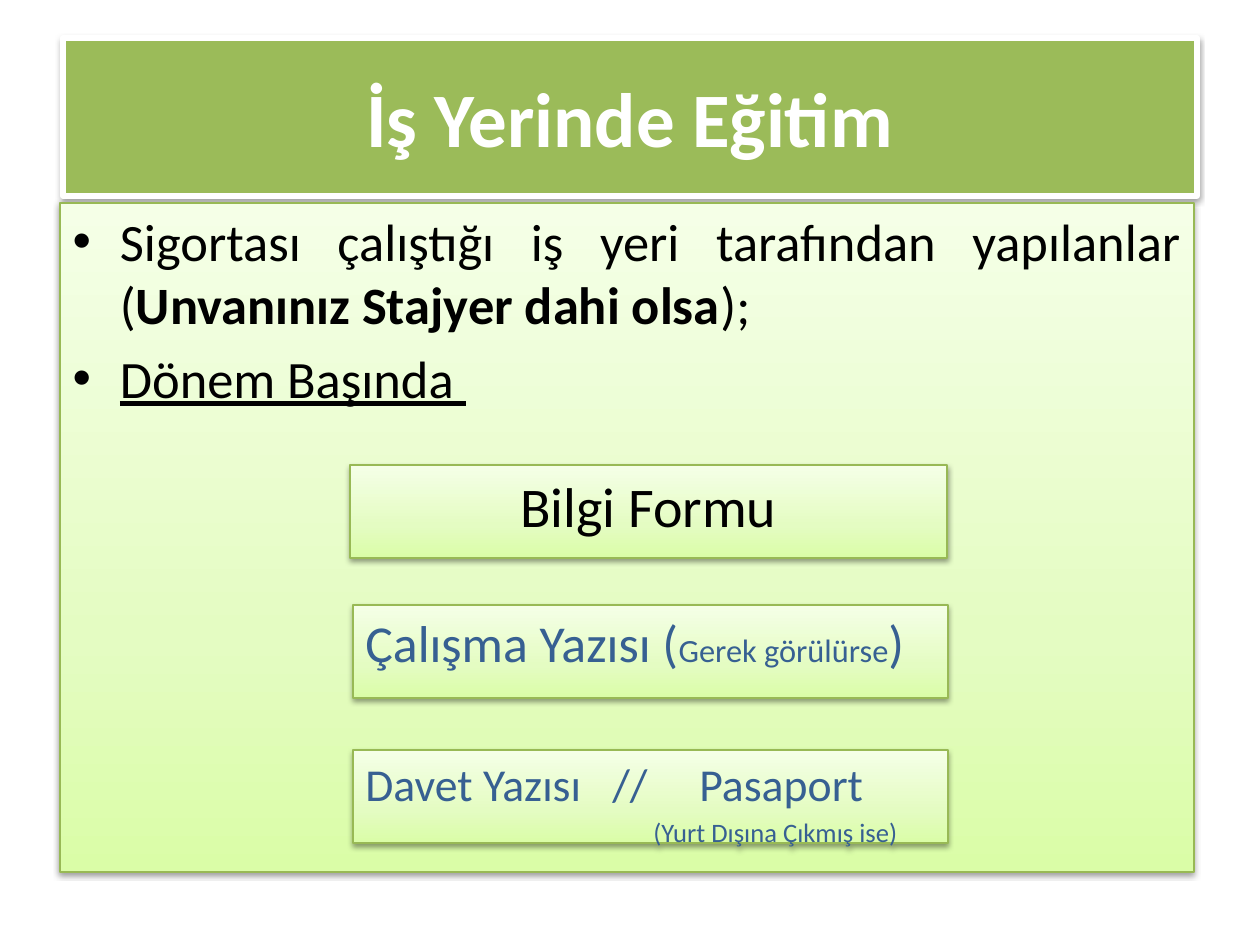
"""Builds the slide about workplace training and the forms due at the start of term."""
from lxml.etree import SubElement
from pptx import Presentation
from pptx.dml.color import RGBColor
from pptx.enum.shapes import MSO_SHAPE
from pptx.enum.text import MSO_ANCHOR, MSO_AUTO_SIZE, PP_ALIGN
from pptx.oxml.ns import qn
from pptx.util import Pt

PX = 914400 / 126
COLORS = {"green": "9BBB59", "edge": "98B955", "white": "FFFFFF",
          "black": "000000", "blue": "376092"}
GRADIENT = [(0, "DAFDA7"), (35, "E4FCC2"), (100, "F5FFE7")]

TITLE = [{"align": PP_ALIGN.CENTER, "spans": [
    ("İş Yerinde Eğitim", 44, "white", {"bold": True})]}]
BODY = [
    {"align": PP_ALIGN.JUSTIFY, "spans": [
        ("Sigortası çalıştığı iş yeri tarafından yapılanlar (", 30, "black", {}),
        ("Unvanınız Stajyer dahi olsa", 30, "black", {"bold": True}),
        (");", 30, "black", {})]},
    {"align": PP_ALIGN.JUSTIFY, "spans": [
        ("Dönem Başında ", 30, "black", {"underline": True})]},
]
FORMS = [
    ((350, 465, 597, 93), [{"align": PP_ALIGN.CENTER, "spans": [
        ("Bilgi Formu", 32, "black", {})]}]),
    ((353, 605, 595, 93), [{"align": PP_ALIGN.LEFT, "spans": [
        ("Çalışma Yazısı (", 29.6, "blue", {}),
        ("Gerek görülürse", 18.5, "blue", {}),
        (")", 29.6, "blue", {})]}]),
    ((353, 750, 595, 93), [
        {"align": PP_ALIGN.LEFT, "tabs": (247, 334), "spans": [
            ("Davet Yazısı\t//\tPasaport", 26.1, "blue", {})]},
        {"align": PP_ALIGN.LEFT, "indent": 288, "spans": [
            ("(Yurt Dışına Çıkmış ise)", 15.2, "blue", {})]}]),
]


def px(length):
    return round(length * PX)


def place(shape, area):
    for name, length in zip(("left", "top", "width", "height"), area):
        setattr(shape, name, px(length))


def add_color(parent, color):
    return SubElement(parent, qn("a:srgbClr"), val=color)


def add_gradient(shape):
    gradient = SubElement(shape._element.spPr, qn("a:gradFill"), rotWithShape="1")
    stops = SubElement(gradient, qn("a:gsLst"))
    for percent, color in GRADIENT:
        add_color(SubElement(stops, qn("a:gs"), pos=str(percent * 1000)), color)
    SubElement(gradient, qn("a:lin"), ang=str(270 * 60000), scaled="0")


def add_shadow(shape):
    effects = SubElement(shape._element.spPr, qn("a:effectLst"))
    shadow = SubElement(effects, qn("a:outerShdw"), blurRad=str(Pt(3.1)),
                        dist=str(Pt(1.6)), dir=str(90 * 60000), rotWithShape="0")
    SubElement(add_color(shadow, COLORS["black"]), qn("a:alpha"), val="38000")


def style(shape, line_color, line_width, fill_color=None):
    if fill_color:
        shape.fill.solid()
        shape.fill.fore_color.rgb = RGBColor.from_string(COLORS[fill_color])
    else:
        add_gradient(shape)
    shape.line.color.rgb = RGBColor.from_string(COLORS[line_color])
    shape.line.width = Pt(line_width)
    add_shadow(shape)


def write(shape, paragraphs, anchor=MSO_ANCHOR.TOP):
    frame = shape.text_frame
    settings = {"word_wrap": True, "auto_size": MSO_AUTO_SIZE.NONE,
                "vertical_anchor": anchor}
    for name, value in settings.items():
        setattr(frame, name, value)
    for index, content in enumerate(paragraphs):
        para = frame.add_paragraph() if index else frame.paragraphs[0]
        para.alignment = content["align"]
        if anchor == MSO_ANCHOR.TOP:
            para.space_before = Pt(round(content["spans"][0][1] * 0.2))
        properties = para._p.get_or_add_pPr()
        if "indent" in content:
            properties.set("marL", str(px(content["indent"])))
        if "tabs" in content:
            stops = SubElement(properties, qn("a:tabLst"))
            for position in content["tabs"]:
                SubElement(stops, qn("a:tab"), pos=str(px(position)), algn="l")
        for text, size, color, extra in content["spans"]:
            span = para.add_run()
            span.text = text
            span.font.color.rgb = RGBColor.from_string(COLORS[color])
            for name, value in {"name": "Calibri", "size": Pt(size), **extra}.items():
                setattr(span.font, name, value)


def main():
    deck = Presentation()
    deck.slide_width, deck.slide_height = px(1260), px(945)
    page = deck.slides.add_slide(deck.slide_layouts[1])

    title, body = page.placeholders
    place(title, (63, 38, 1134, 158))
    style(title, "white", 3, "green")
    write(title, TITLE, MSO_ANCHOR.MIDDLE)

    place(body, (60, 203, 1134, 669))
    style(body, "edge", 0.75)
    write(body, BODY)

    for area, paragraphs in FORMS:
        box = page.shapes.add_shape(MSO_SHAPE.RECTANGLE, *map(px, area))
        style(box, "edge", 0.75)
        write(box, paragraphs)

    deck.save("out.pptx")


if __name__ == "__main__":
    main()
